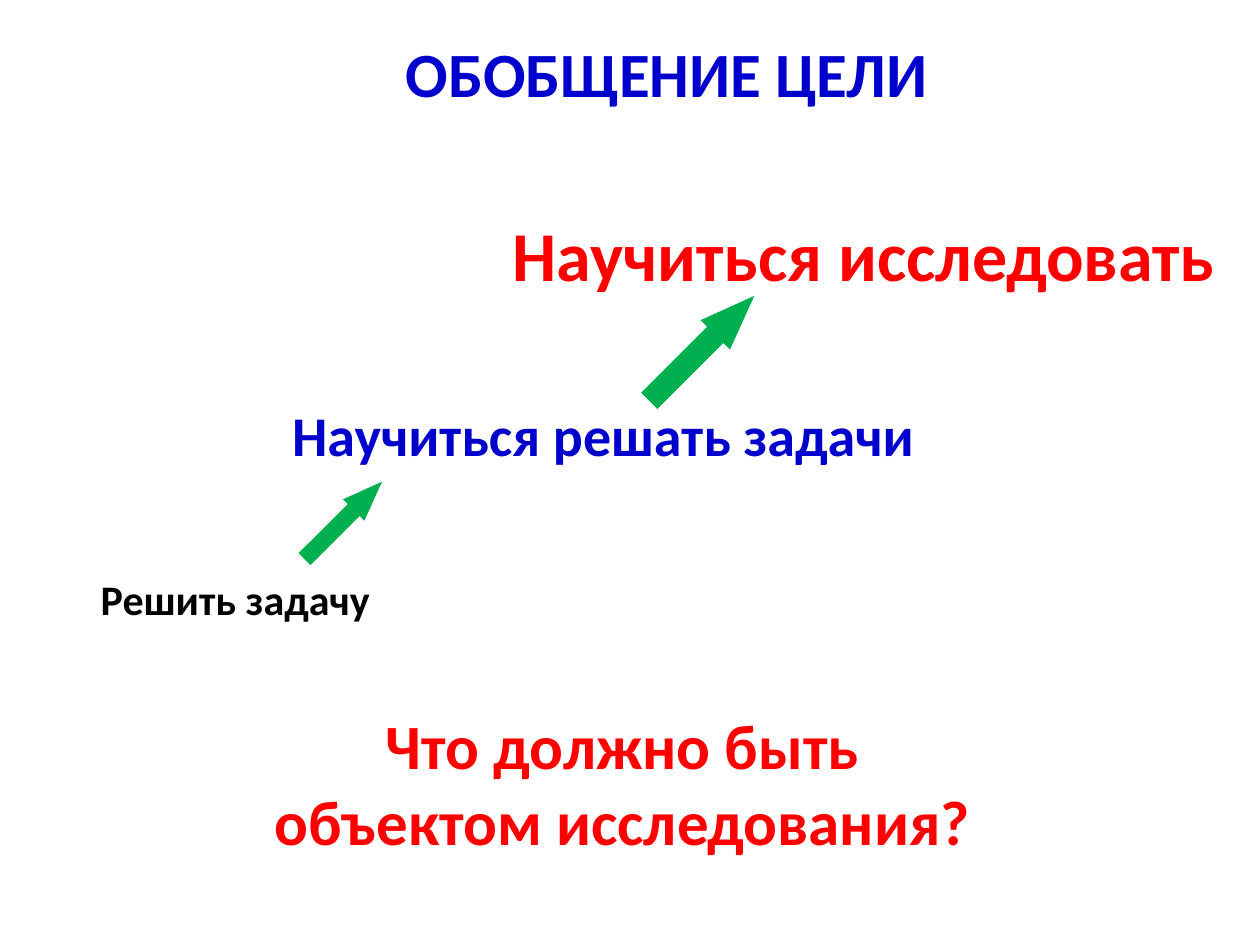
from pptx import Presentation
from pptx.dml.color import RGBColor
from pptx.enum.shapes import MSO_SHAPE
from pptx.enum.text import MSO_ANCHOR, MSO_AUTO_SIZE, PP_ALIGN
from pptx.util import Inches, Pt

BLUE, RED, BLACK, GREEN = "0000CC", "FF0000", "000000", "00B050"


def color(hex_string):
    return RGBColor.from_string(hex_string)


def place(shape, box):
    shape.left, shape.top, shape.width, shape.height = map(Inches, box)


def write(shape, text, size, text_color, align=PP_ALIGN.LEFT):
    """Fill a shape with one bold, unwrapped paragraph."""
    frame = shape.text_frame
    frame.text = text
    frame.word_wrap = False
    frame.auto_size = MSO_AUTO_SIZE.SHAPE_TO_FIT_TEXT
    frame.vertical_anchor = MSO_ANCHOR.TOP
    paragraph = frame.paragraphs[0]
    paragraph.alignment = align
    for run in paragraph.runs:
        run.font.name = "Calibri"
        run.font.size = Pt(size)
        run.font.bold = True
        run.font.color.rgb = color(text_color)


def add_heading(slide, box):
    heading = slide.shapes.title
    write(heading, "ОБОБЩЕНИЕ ЦЕЛИ", 36, BLUE)
    place(heading, box)


def add_label(slide, box, *text_style):
    label = slide.shapes.add_textbox(*map(Inches, box))
    write(label, *text_style)
    place(label, box)


def add_rising_arrow(slide, box):
    arrow = slide.shapes.add_shape(MSO_SHAPE.RIGHT_ARROW, *map(Inches, box))
    arrow.rotation = 315
    arrow.adjustments[0] = 0.555
    arrow.adjustments[1] = 1.328
    arrow.shadow.inherit = False
    arrow.fill.solid()
    arrow.fill.fore_color.rgb = color(GREEN)
    arrow.line.fill.background()


def add_goal_ladder(slide, left, top):
    """Three goals climbing to the right, joined by rising arrows."""
    goals = [
        ((0, 2.87, 2.36, 0.5), "Решить задачу", 24, BLACK),
        ((1.52, 1.5, 5.19, 0.64), "Научиться решать задачи", 32, BLUE),
        ((3.27, 0, 5.83, 0.77), "Научиться исследовать", 40, RED),
    ]
    arrows = [(1.59, 2.38, 0.87, 0.24), (4.28, 0.97, 1.18, 0.33)]
    for (x, y, width, height), *text_style in goals:
        add_label(slide, (left + x, top + y, width, height), *text_style)
    for x, y, width, height in arrows:
        add_rising_arrow(slide, (left + x, top + y, width, height))


def main():
    prs = Presentation()
    prs.slide_width, prs.slide_height = Inches(10), Inches(7.5)
    slide = prs.slides.add_slide(prs.slide_layouts[5])

    add_heading(slide, (3.12, 0.22, 4.39, 0.71))
    add_goal_ladder(slide, 0.7, 1.63)
    # Closing question, broken into two lines
    add_label(slide, (2.05, 5.56, 5.89, 1.31),
              "Что должно быть \vобъектом исследования? ", 36, RED, PP_ALIGN.CENTER)

    prs.save("out.pptx")


if __name__ == "__main__":
    main()
